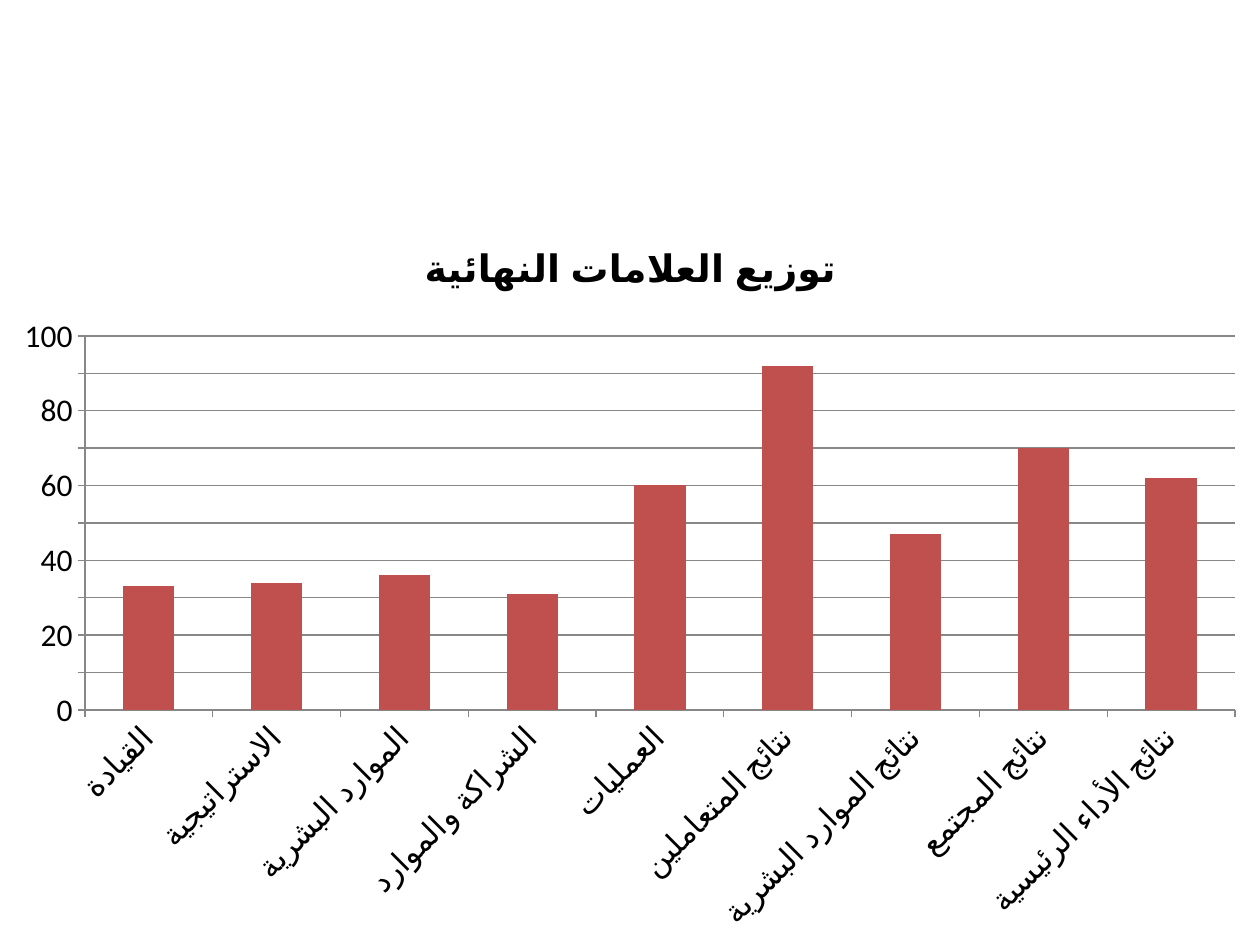
"""Build a slide with a column chart of the final marks by criterion."""
from typing import NamedTuple

from pptx import Presentation
from pptx.chart.data import CategoryChartData
from pptx.dml.color import RGBColor
from pptx.enum.chart import XL_CHART_TYPE as ChartType, XL_TICK_MARK as TickMark
from pptx.oxml import parse_xml
from pptx.oxml.ns import nsdecls
from pptx.util import Emu, Pt

EMU_PER_PX = 914400 / 126
COLORS = {"text": "000000", "bars": "C0504D", "lines": "878787"}
FONT = "Calibri"


class Box(NamedTuple):
    left: int
    top: int
    width: int
    height: int


class Criterion(NamedTuple):
    name: str
    marks: int


SLIDE = Box(0, 0, 1260, 945)
CHART = Box(0, 220, 1260, 725)
PLOT = Box(85, 336, 1150, 374)
CRITERIA = [
    Criterion("القيادة", 33),
    Criterion("الاستراتيجية", 34),
    Criterion("الموارد البشرية", 36),
    Criterion("الشراكة والموارد", 31),
    Criterion("العمليات", 60),
    Criterion("نتائج المتعاملين", 92),
    Criterion("نتائج الموارد البشرية", 47),
    Criterion("نتائج المجتمع", 70),
    Criterion("نتائج الأداء الرئيسية", 62),
]


def px(length: int) -> Emu:
    return Emu(round(length * EMU_PER_PX))


def rgb(role: str) -> RGBColor:
    return RGBColor.from_string(COLORS[role])


def format_font(font, *, size: float, bold: bool = False) -> None:
    font.name, font.size, font.bold = FONT, Pt(size), bold
    font.color.rgb = rgb("text")


def write_text(frame, text: str, *, size: float, bold: bool = False) -> None:
    run = frame.paragraphs[0].add_run()
    run.text = text
    format_font(run.font, size=size, bold=bold)


def style_line(line) -> None:
    line.color.rgb = rgb("lines")
    line.width = Pt(0.75)


def style_axis(axis, *, size: float) -> None:
    axis.major_tick_mark = TickMark.OUTSIDE
    axis.minor_tick_mark = TickMark.NONE
    format_font(axis.tick_labels.font, size=size)
    style_line(axis.format.line)


def place_plot(chart, plot: Box, frame: Box) -> None:
    area = chart._chartSpace.xpath("c:chart/c:plotArea")[0]
    for layout in area.xpath("c:layout"):
        area.remove(layout)
    shares = {
        "x": (plot.left - frame.left) / frame.width,
        "y": (plot.top - frame.top) / frame.height,
        "w": plot.width / frame.width,
        "h": plot.height / frame.height,
    }
    modes = "".join(f'<c:{side}Mode val="edge"/>' for side in "xy")
    sizes = "".join(f'<c:{key} val="{share:.4f}"/>' for key, share in shares.items())
    area.insert(0, parse_xml(
        f'<c:layout {nsdecls("c")}><c:manualLayout><c:layoutTarget val="inner"/>'
        f"{modes}{sizes}</c:manualLayout></c:layout>"))


def add_marks_chart(slide, criteria: list[Criterion]) -> None:
    marks = CategoryChartData()
    marks.categories = [criterion.name for criterion in criteria]
    marks.add_series("Series 1", [criterion.marks for criterion in criteria])
    chart = slide.shapes.add_chart(
        ChartType.COLUMN_CLUSTERED, *map(px, CHART), marks).chart
    format_font(chart.font, size=18)
    chart.has_legend = False
    chart.has_title = True
    write_text(chart.chart_title.text_frame, "توزيع العلامات النهائية",
               size=21.6, bold=True)
    chart.chart_title.include_in_layout = False

    for axis in (chart.category_axis, chart.value_axis):
        style_axis(axis, size=18)
    scale = chart.value_axis
    scale.minimum_scale, scale.maximum_scale, scale.major_unit = 0, 100, 10
    scale.has_major_gridlines = True
    style_line(scale.major_gridlines.format.line)
    label_body = chart._chartSpace.xpath("//c:catAx/c:txPr/a:bodyPr")[0]
    label_body.set("rot", str(-45 * 60000))

    columns = chart.plots[0]
    columns.gap_width = 150
    columns.vary_by_categories = False
    fill = columns.series[0].format.fill
    fill.solid()
    fill.fore_color.rgb = rgb("bars")
    place_plot(chart, PLOT, CHART)


def main() -> None:
    deck = Presentation()
    deck.slide_width, deck.slide_height = px(SLIDE.width), px(SLIDE.height)
    slide = deck.slides.add_slide(deck.slide_layouts[6])
    add_marks_chart(slide, CRITERIA)
    deck.save("out.pptx")


if __name__ == "__main__":
    main()
